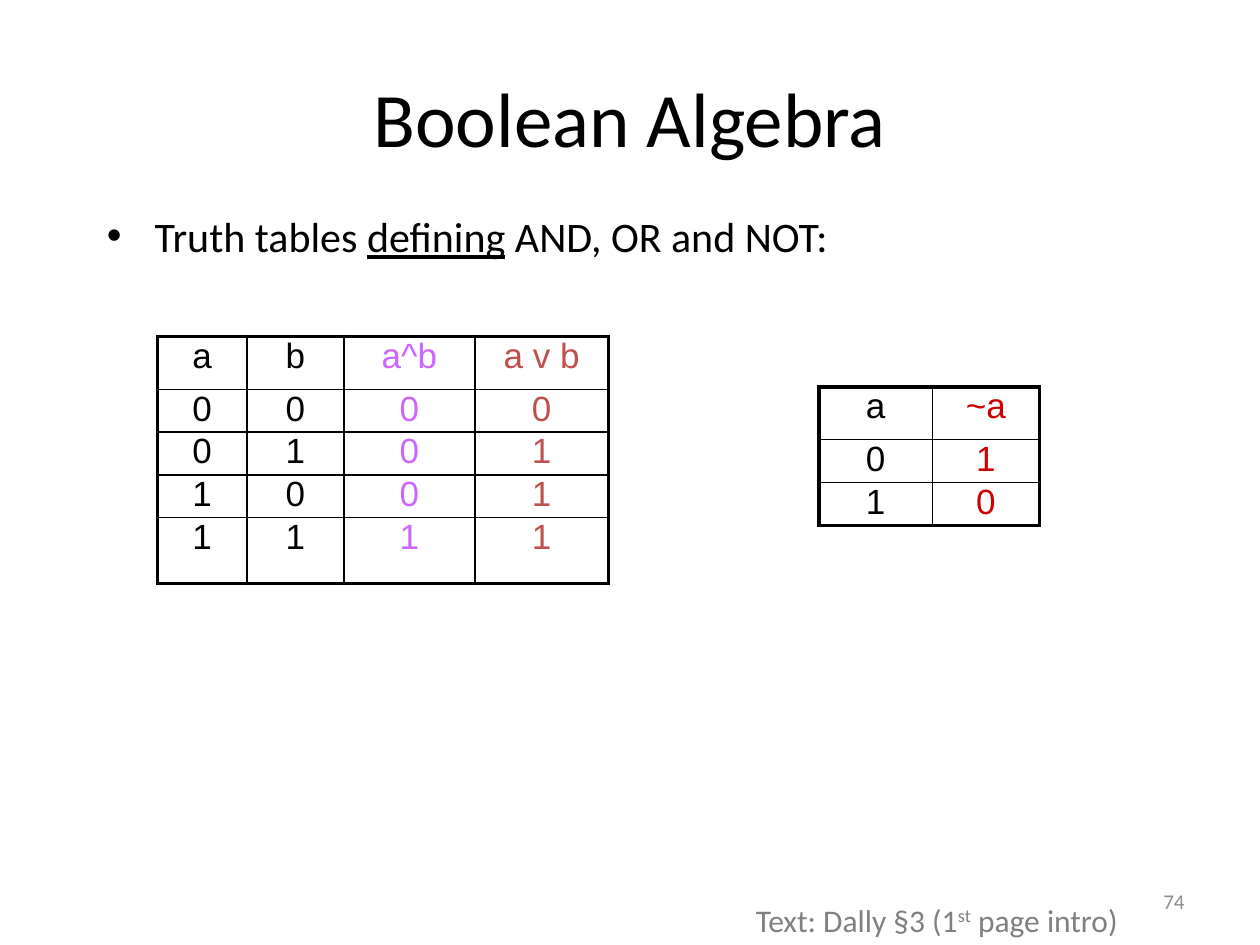
from typing import NamedTuple

from lxml.etree import SubElement
from pptx import Presentation
from pptx.dml.color import RGBColor
from pptx.enum.text import MSO_ANCHOR as Anchor, PP_ALIGN as Align
from pptx.oxml.ns import qn
from pptx.util import Inches, Pt

COLORS = {
    "black": "000000",
    "and": "CC66FF",
    "or": "C0504D",
    "not": "CC0000",
    "source": "808080",
    "number": "8C8C8C",
}
OUTER, INNER = 2.25, 1


class Span(NamedTuple):
    text: str
    underline: bool = False
    superscript: bool = False


class TextBox(NamedTuple):
    place: tuple[float, float, float, float]
    spans: list[Span]
    size: float
    color: str = "black"
    align: Align = Align.LEFT
    anchor: Anchor = Anchor.TOP
    bullet: bool = False


class Column(NamedTuple):
    width: float
    entries: list[str]
    color: str = "black"


class TruthTable(NamedTuple):
    left: float
    top: float
    row_heights: list[float]
    columns: list[Column]


TEXTS = [
    TextBox((0.5, 0.3, 9, 1.25), [Span("Boolean Algebra")], 44,
            align=Align.CENTER, anchor=Anchor.MIDDLE),
    TextBox((0.75, 1.58, 8.5, 4.88),
            [Span("Truth tables "), Span("defining", underline=True), Span(" AND, OR and NOT:")],
            24, bullet=True),
    TextBox((5.9, 7.1, 3.17, 0.4),
            [Span("Text: Dally §3 (1"), Span("st", superscript=True), Span(" page intro)")],
            18, "source"),
    TextBox((7.17, 6.95, 2.33, 0.4), [Span("74")], 12, "number", Align.RIGHT, Anchor.MIDDLE),
]
TABLES = [
    TruthTable(1.25, 2.67, [0.42, 0.34, 0.34, 0.34, 0.52], [
        Column(0.71, ["a", "0", "0", "1", "1"]),
        Column(0.77, ["b", "0", "1", "0", "1"]),
        Column(1.04, ["a^b", "0", "0", "0", "1"], "and"),
        Column(1.06, ["a v b", "0", "1", "1", "1"], "or"),
    ]),
    TruthTable(6.5, 3.07, [0.42, 0.34, 0.34], [
        Column(0.9, ["a", "0", "1"]),
        Column(0.85, ["~a", "1", "0"], "not"),
    ]),
]


def add_span(para, text: str, font_name: str, size: float, color: str):
    """Append a styled run to a paragraph and return it."""
    span = para.add_run()
    span.text = text
    span.font.name = font_name
    span.font.size = Pt(size)
    span.font.color.rgb = RGBColor.from_string(COLORS[color])
    return span


def add_bullet(para) -> None:
    """Give a paragraph a hanging round bullet."""
    properties = para._p.get_or_add_pPr()
    properties.set("marL", str(Inches(0.38)))
    properties.set("indent", str(-Inches(0.38)))
    SubElement(properties, qn("a:buFont"), typeface="Arial")
    SubElement(properties, qn("a:buChar"), char="•")
    para.line_spacing = 1.1


def add_text(page, item: TextBox) -> None:
    """Draw one text box."""
    box = page.shapes.add_textbox(*map(Inches, item.place))
    frame = box.text_frame
    frame.word_wrap = True
    frame.vertical_anchor = item.anchor
    para = frame.paragraphs[0]
    para.alignment = item.align
    if item.bullet:
        add_bullet(para)
    for part in item.spans:
        span = add_span(para, part.text, "Calibri", item.size, item.color)
        if part.underline:
            span.font.underline = True
        if part.superscript:
            span._r.get_or_add_rPr().set("baseline", "30000")


def set_borders(cell, widths: dict[str, float]) -> None:
    """Draw black cell borders of the given point widths."""
    properties = cell._tc.get_or_add_tcPr()
    for side, width in widths.items():
        line = SubElement(properties, qn(f"a:ln{side}"), w=str(Pt(width)))
        fill = SubElement(line, qn("a:solidFill"))
        SubElement(fill, qn("a:srgbClr"), val=COLORS["black"])


def add_truth_table(page, item: TruthTable) -> None:
    """Draw a truth table with a heavy frame and thin inner rules."""
    row_count, column_count = len(item.row_heights), len(item.columns)
    width = sum(column.width for column in item.columns)
    table = page.shapes.add_table(
        row_count, column_count, Inches(item.left), Inches(item.top),
        Inches(width), Inches(sum(item.row_heights))).table
    table.first_row = table.horz_banding = False
    for row, height in zip(table.rows, item.row_heights):
        row.height = Inches(height)
    for x, column in enumerate(item.columns):
        table.columns[x].width = Inches(column.width)
        for y, entry in enumerate(column.entries):
            cell = table.cell(y, x)
            cell.margin_left = cell.margin_right = cell.margin_top = cell.margin_bottom = 0
            set_borders(cell, {
                "L": OUTER if x == 0 else INNER,
                "R": OUTER if x == column_count - 1 else INNER,
                "T": OUTER if y == 0 else INNER,
                "B": OUTER if y == row_count - 1 else INNER,
            })
            cell.fill.background()
            para = cell.text_frame.paragraphs[0]
            para.alignment = Align.CENTER
            add_span(para, entry, "Arial", 20, column.color)


def main() -> None:
    """Build and save the truth table slide."""
    deck = Presentation()
    deck.slide_width, deck.slide_height = Inches(10), Inches(7.5)
    page = deck.slides.add_slide(deck.slide_layouts[6])
    for text in TEXTS:
        add_text(page, text)
    for table in TABLES:
        add_truth_table(page, table)
    deck.save("out.pptx")


if __name__ == "__main__":
    main()
